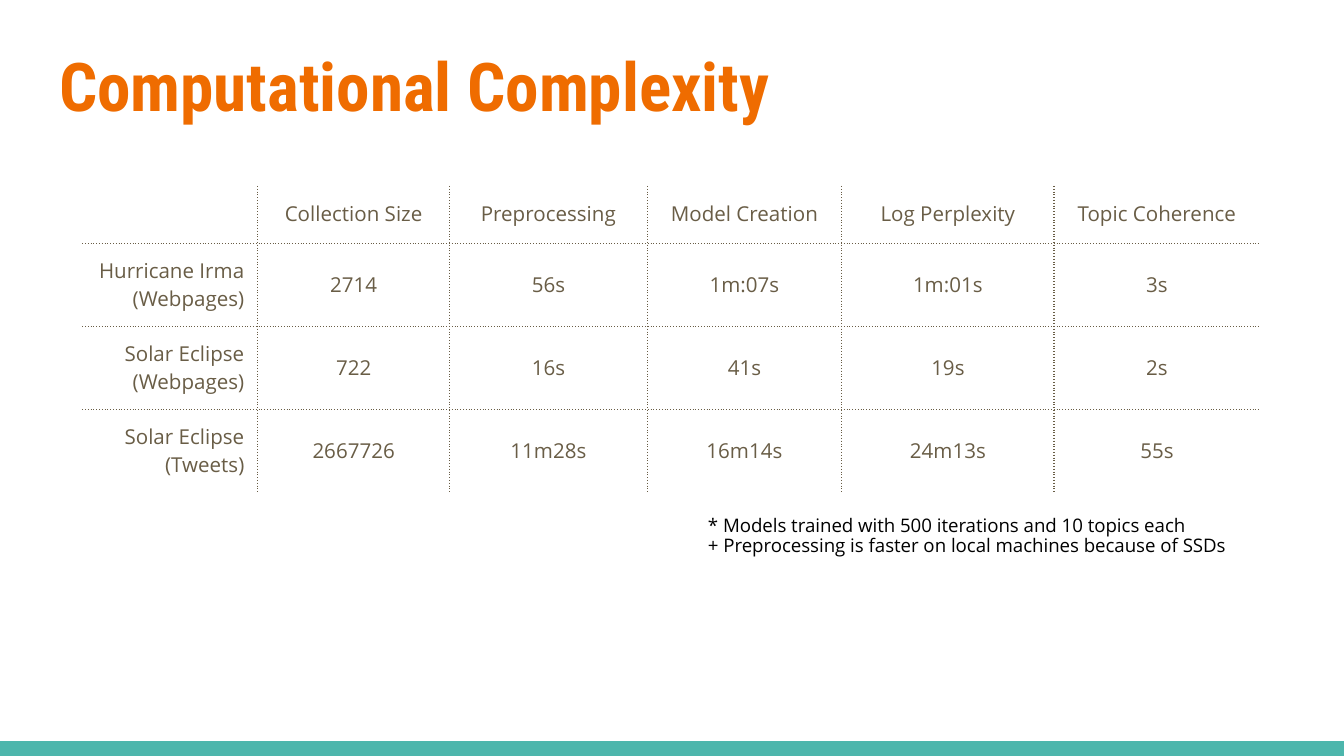
from pptx import Presentation
from pptx.dml.color import RGBColor
from pptx.enum.shapes import MSO_SHAPE
from pptx.enum.text import MSO_ANCHOR, PP_ALIGN
from pptx.oxml import parse_xml
from pptx.oxml.ns import nsdecls
from pptx.util import Cm, Pt

TEAL = RGBColor(0x4D, 0xB6, 0xAC)
ORANGE = RGBColor(0xEF, 0x6C, 0x00)
BROWN = RGBColor(0x69, 0x5D, 0x46)
BLACK = RGBColor(0, 0, 0)

INSET = Cm(0.25)
SIDES = ("margin_left", "margin_right", "margin_top", "margin_bottom")
HEAD = {"name": "Roboto Condensed", "size": Pt(36), "bold": True}
BODY = {"name": "Open Sans", "size": Pt(11), "bold": False}
NOTE = {"name": "Open Sans", "size": Pt(10), "bold": False}

COLS = (3.3, 3.63, 3.73, 3.68, 4.01, 3.89)
ROWS = (1.07, 1.57, 1.57, 1.57)
DATA = (
    ("", "Collection Size", "Preprocessing", "Model Creation",
     "Log Perplexity", "Topic Coherence"),
    ("Hurricane Irma\n(Webpages)", "2714", "56s", "1m:07s", "1m:01s", "3s"),
    ("Solar Eclipse\n(Webpages)", "722", "16s", "41s", "19s", "2s"),
    ("Solar Eclipse\n(Tweets)", "2667726", "11m28s", "16m14s", "24m13s", "55s"),
)
NOTES = ("* Models trained with 500 iterations and 10 topics each\n"
         "+ Preprocessing is faster on local machines because of SSDs")


class Deck:
    def __init__(self, line):
        self.line = line
        self.file = Presentation()
        self.file.slide_width, self.file.slide_height = Cm(25.4), Cm(14.29)
        self.slide = self.file.slides.add_slide(self.file.slide_layouts[6])

    def style(self, frame, font, color, align=PP_ALIGN.LEFT, space=None):
        for para in frame.paragraphs:
            para.alignment = align
            para.line_spacing = space
            for key, value in font.items():
                setattr(para.font, key, value)
            para.font.color.rgb = color

    def bar(self, x, y, w, h, color):
        shape = self.slide.shapes.add_shape(
            MSO_SHAPE.RECTANGLE, Cm(x), Cm(y), Cm(w), Cm(h))
        shape.shadow.inherit = False
        shape.fill.solid()
        shape.fill.fore_color.rgb = color
        shape.line.fill.background()

    def text(self, x, y, w, h, words, font, color,
             anchor=MSO_ANCHOR.TOP, space=None):
        box = self.slide.shapes.add_textbox(Cm(x), Cm(y), Cm(w), Cm(h))
        frame = box.text_frame
        frame.word_wrap = True
        frame.vertical_anchor = anchor
        for side in SIDES:
            setattr(frame, side, INSET)
        frame.text = words
        self.style(frame, font, color, space=space)

    def edge(self, cell, sides):
        """Draw dotted lines on the given sides, listed in L, R, T, B order."""
        props = cell._tc.get_or_add_tcPr()
        for side in sides:
            props.append(parse_xml(
                f'<a:ln{side} {nsdecls("a")} w="{Pt(0.75)}"><a:solidFill>'
                f'<a:srgbClr val="{self.line}"/></a:solidFill>'
                f'<a:prstDash val="dot"/></a:ln{side}>'))

    def table(self, x, y, cols, rows, data, font, color):
        grid = self.slide.shapes.add_table(
            len(rows), len(cols), Cm(x), Cm(y),
            Cm(sum(cols)), Cm(sum(rows))).table
        grid.first_row = grid.horz_banding = False
        for col, width in zip(grid.columns, cols):
            col.width = Cm(width)
        for row, height in zip(grid.rows, rows):
            row.height = Cm(height)
        for r, line in enumerate(data):
            for c, words in enumerate(line):
                cell = grid.cell(r, c)
                inner = {"L": c > 0, "R": c < len(cols) - 1,
                         "T": r > 0, "B": r < len(rows) - 1}
                self.edge(cell, [side for side, on in inner.items() if on])
                cell.fill.background()
                for side in SIDES:
                    setattr(cell, side, INSET)
                if r and c:
                    cell.vertical_anchor = MSO_ANCHOR.MIDDLE
                cell.text = words
                self.style(cell.text_frame, font, color,
                           PP_ALIGN.CENTER if c else PP_ALIGN.RIGHT)


def main():
    deck = Deck(BROWN)
    deck.bar(0, 14.01, 25.4, 0.28, TEAL)
    deck.text(0.87, 0.62, 23.67, 1.96, "Computational Complexity",
              HEAD, ORANGE, MSO_ANCHOR.MIDDLE)
    deck.table(1.57, 3.53, COLS, ROWS, DATA, BODY, BROWN)
    deck.text(13.13, 9.52, 10.69, 1.42, NOTES, NOTE, BLACK, space=0.88)
    deck.file.save("out.pptx")


if __name__ == "__main__":
    main()
